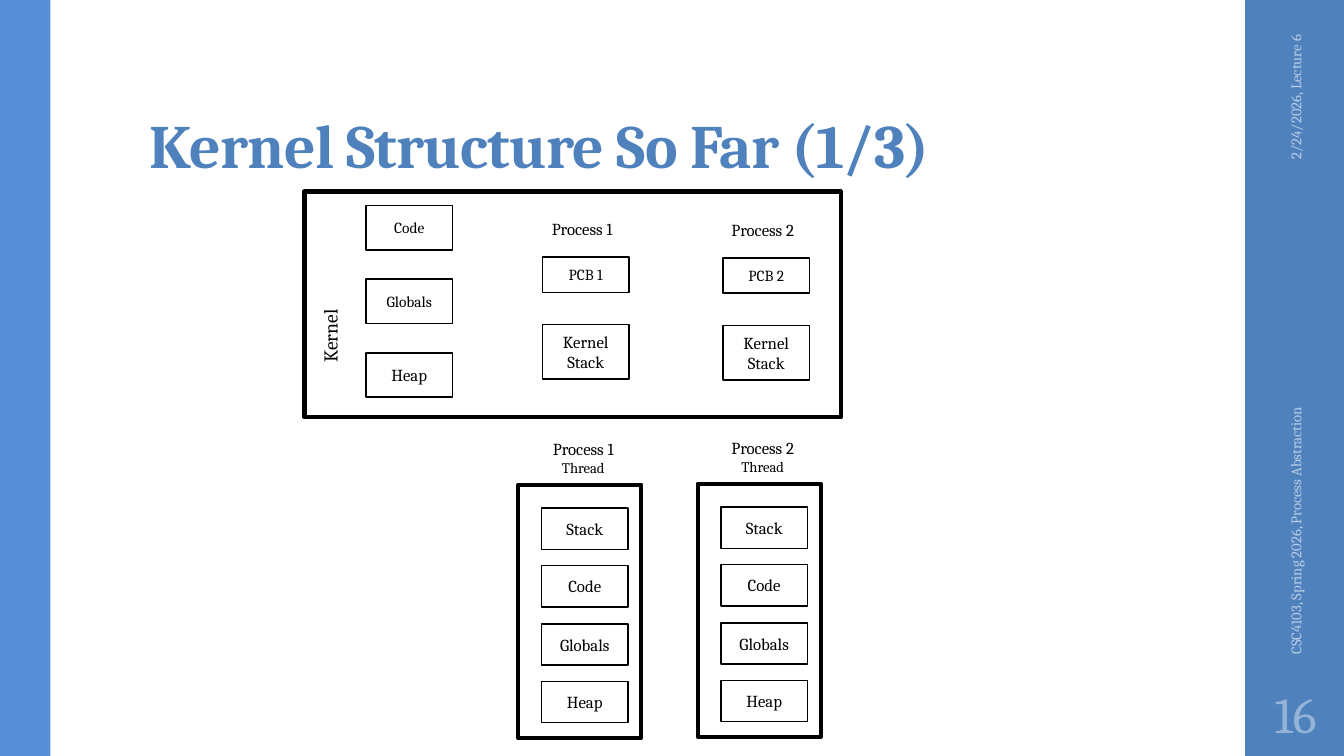
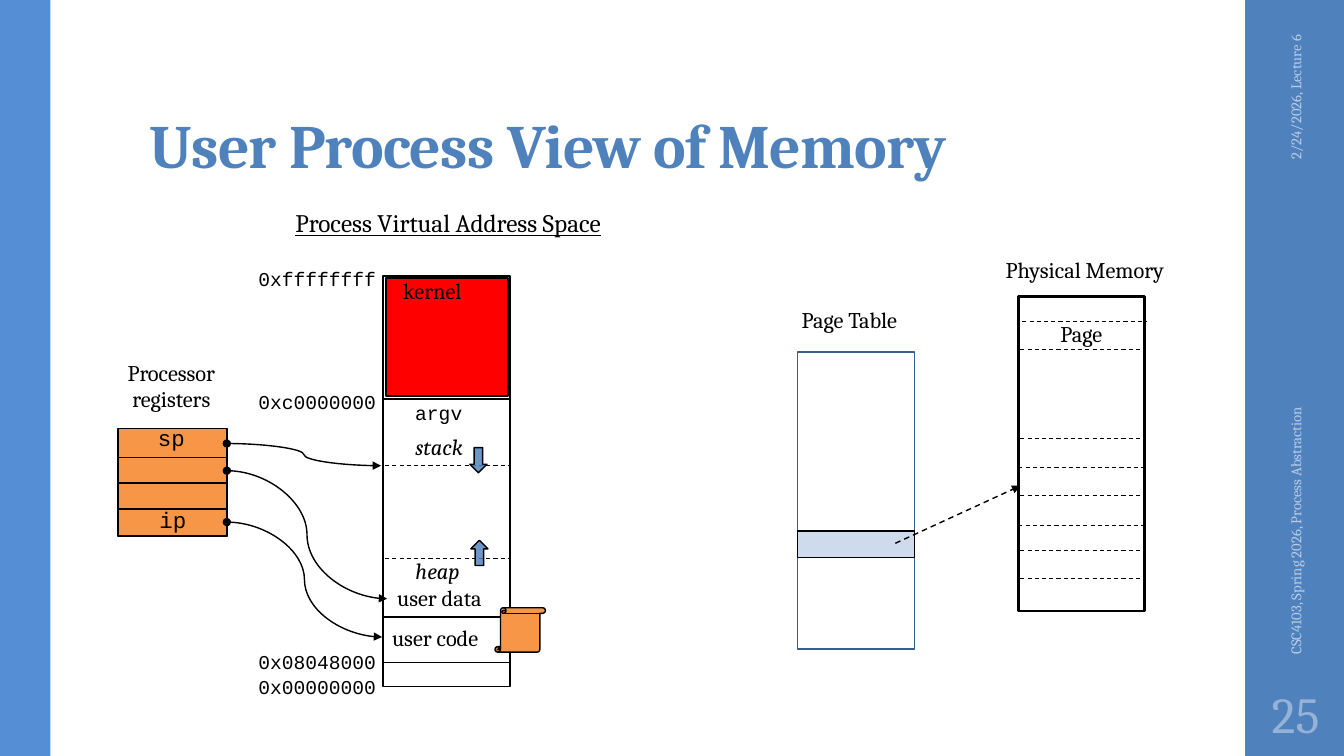
from dataclasses import dataclass
from typing import Any

from lxml.etree import SubElement
from pptx import Presentation
from pptx.dml.color import RGBColor
from pptx.enum.dml import MSO_LINE
from pptx.enum.shapes import MSO_CONNECTOR, MSO_SHAPE
from pptx.enum.text import MSO_ANCHOR, MSO_AUTO_SIZE, PP_ALIGN
from pptx.oxml.ns import qn
from pptx.util import Inches, Pt

SERIF, MONO = "Cambria", "Courier New"
BLACK, BLUE, SKY = "000000", "4F81BD", "558ED5"
PALE, STEEL, NAVY = "B9CDE5", "95B3D7", "376092"
ORANGE, RED = "F79646", "FF0000"
LEFT, MID, RIGHT = PP_ALIGN.LEFT, PP_ALIGN.CENTER, PP_ALIGN.RIGHT


def tint(color, code):
    color.rgb = RGBColor.from_string(code)


def style(para, size, font=SERIF, color=BLACK, align=MID):
    para.alignment = align
    para.font.size = Pt(size)
    para.font.name = font
    tint(para.font.color, color)


def write(shape, text, size, anchor=MSO_ANCHOR.TOP, **look):
    frame = shape.text_frame
    frame.word_wrap = True
    frame.vertical_anchor = anchor
    para = frame.paragraphs[0]
    para.text = text
    style(para, size, **look)
    return para


@dataclass
class Pane:
    slide: Any
    left: float
    top: float

    def spot(self, x, y):
        return Inches(round(self.left + x, 2)), Inches(round(self.top + y, 2))

    def shape(self, x, y, wide, high, fill=None, line=BLACK, width=1,
              kind=MSO_SHAPE.RECTANGLE, alpha=None):
        item = self.slide.shapes.add_shape(
            kind, *self.spot(x, y), Inches(wide), Inches(high))
        item.shadow.inherit = False
        if fill:
            item.fill.solid()
            tint(item.fill.fore_color, fill)
        else:
            item.fill.background()
        if alpha:
            color = item.element.spPr.find(qn("a:solidFill"))[0]
            SubElement(color, qn("a:alpha"), val=str(alpha * 1000))
        if line:
            tint(item.line.color, line)
            item.line.width = Pt(width)
        else:
            item.line.fill.background()
        return item

    def cell(self, x, y, high, text, size=12):
        item = self.shape(x, y, 0.86, high, width=1.1)
        write(item, text, size, MSO_ANCHOR.MIDDLE)

    def label(self, x, y, wide, high, text, size, **look):
        item = self.slide.shapes.add_textbox(
            *self.spot(x, y), Inches(wide), Inches(high))
        write(item, text, size, **look)
        return item

    def link(self, start, end, width=1, dash=False, head=None, tail=None,
             kind=MSO_CONNECTOR.STRAIGHT):
        item = self.slide.shapes.add_connector(
            kind, *self.spot(*start), *self.spot(*end))
        tint(item.line.color, BLACK)
        item.line.width = Pt(width)
        if dash:
            item.line.dash_style = MSO_LINE.DASH
        props = item.element.spPr
        stroke = props.find(qn("a:ln"))
        for tag, tip in (("a:headEnd", head), ("a:tailEnd", tail)):
            if tip:
                SubElement(stroke, qn(tag), type=tip)
        SubElement(props, qn("a:effectLst"))


def bands(layout, slide):
    page = Pane(slide, 0, 0)
    tree = layout.element.cSld.spTree
    for x, wide, color in ((0, 0.5, SKY), (12.35, 1, BLUE)):
        band = page.shape(x, 0, wide, 7.5, color, None)
        tree.insert(2, band.element)


def frame(slide, title, number):
    head = slide.shapes.title
    head.left, head.top = Inches(1.38), Inches(0.32)
    head.width, head.height = Inches(10.6), Inches(1.53)
    para = write(head, title, 44, MSO_ANCHOR.BOTTOM, color=BLUE, align=LEFT)
    para.font.bold = True
    para.line_spacing = 0.9
    para.runs[0].font._element.set("spc", "-50")
    head.text_frame.auto_size = MSO_AUTO_SIZE.NONE
    head.text_frame.margin_top = Inches(0.03)

    page = Pane(slide, 0, 0)
    for x, y, wide, text, align in (
        (11.81, 1.09, 2.08, "2/24/2026, Lecture 6", RIGHT),
        (10.89, 4.43, 3.92, "CSC4103, Spring 2026, Process Abstraction", LEFT),
    ):
        note = page.label(x, y, wide, 0.4, text, 10.5, color=PALE,
                          align=align, anchor=MSO_ANCHOR.MIDDLE)
        note.rotation = 270
    count = page.label(12.35, 6.75, 1, 0.65, str(number), 36, color=STEEL,
                       anchor=MSO_ANCHOR.MIDDLE)
    count.text_frame.margin_left = count.text_frame.margin_right = Inches(0.05)


def kernel(slide, left, top):
    pane = Pane(slide, left, top)
    pane.shape(0, 0, 5.32, 2.24, width=3)
    name = pane.label(0.03, 0.77, 0.44, 1.33, "Kernel", 14,
                      anchor=MSO_ANCHOR.MIDDLE)
    name.text_frame._bodyPr.set("vert", "vert270")
    for row, (text, size) in enumerate(
            (("Code", 11), ("Globals", 11), ("Heap", 12))):
        pane.cell(0.61, 0.14 + 0.73 * row, 0.44, text, size)
    for num, x, y in ((1, 2.36, 0.22), (2, 4.15, 0.23)):
        pane.label(x - 0.12, y, 1.03, 0.3, f"Process {num}", 12)
        pane.cell(x, y + 0.43, 0.35, f"PCB {num}", 11)
        pane.cell(x, y + 1.1, 0.54, "Kernel\nStack")


def process(slide, left, top, num):
    pane = Pane(slide, left, top)
    name = pane.label(0.13, -0.51, 1.03, 0.49, f"Process {num}\nThread", 12)
    name.text_frame.paragraphs[0].runs[1].font.size = Pt(10.5)
    for row, text in enumerate(("Stack", "Code", "Globals", "Heap")):
        pane.cell(0.23, 0.23 + 0.575 * row, 0.41, text)
    pane.shape(0, 0, 1.22, 2.51, width=3)


def space(slide, left, top):
    pane = Pane(slide, left, top)
    title = pane.label(-1.33, -0.73, 3.95, 0.4,
                       "Process Virtual Address Space", 18)
    title.text_frame.paragraphs[0].font.underline = True
    for y, text in ((-0.14, "0xffffffff"), (1.08, "0xc0000000"),
                    (3.66, "0x08048000"), (3.91, "0x00000000")):
        pane.label(-1.4, y, 1.43, 0.34, text, 14, font=MONO, align=RIGHT)
    pane.label(0.22, 1.19, 0.77, 0.34, "argv", 14, font=MONO, align=LEFT)
    for y, wide, text in ((1.51, 0.89, "stack"), (2.74, 0.86, "heap")):
        part = pane.label(0.11, y, wide, 0.37, text, 16)
        part.text_frame.paragraphs[0].font.italic = True
    pane.shape(0, 0, 1.26, 4.07)
    for y, width in ((1.22, 1.25), (3.38, 1), (3.83, 1)):
        pane.link((0, y), (1.26, y), width)
    for y in (1.88, 2.8):
        pane.link((0.02, y), (1.27, y), 0.75, dash=True)
    for x, y, turn in ((0.87, 2.62, 0), (0.86, 1.7, 180)):
        arrow = pane.shape(x, y, 0.17, 0.25, BLUE,
                           kind=MSO_SHAPE.UP_ARROW, alpha=83)
        arrow.rotation = turn
    pane.shape(1.11, 3.29, 0.5, 0.44, ORANGE, kind=MSO_SHAPE.VERTICAL_SCROLL)
    pane.shape(0.03, 0.02, 1.21, 1.17, RED)
    for x, y, text in ((0.1, -0.04, "kernel"), (0.04, 3.01, "user data"),
                       (-0.01, 3.4, "user code")):
        pane.label(x, y, 1.25, 0.37, text, 16, align=LEFT)


def bank(slide, left, top):
    pane = Pane(slide, left, top)
    title = pane.label(-0.1, -0.74, 1.26, 0.64, "Processor", 16)
    para = title.text_frame.add_paragraph()
    para.text = "registers"
    style(para, 16)
    pane.shape(0, 0, 1.08, 1.07, ORANGE)
    for y, high in ((0.29, 0.25), (0.8, 0.27)):
        pane.shape(0, y, 1.08, high)
    for x, y, wide, text in ((0.26, -0.09, 0.54, "sp"),
                             (0.23, 0.72, 0.63, "ip")):
        pane.label(x, y, wide, 0.37, text, 16, font=MONO)
    for y, end in ((0.15, (2.61, 0.37)), (0.42, (2.67, 1.69)),
                   (0.93, (2.62, 2.07))):
        pane.link((1.08, y), end, head="oval", tail="triangle",
                  kind=MSO_CONNECTOR.CURVE)


def table(slide, left, top):
    pane = Pane(slide, left, top)
    pane.label(-0.24, -0.5, 1.51, 0.37, "Page Table", 16)
    pane.shape(0, 0, 1.16, 2.95, line=NAVY)
    pane.shape(0, 1.78, 1.16, 0.26, BLUE, alpha=28)
    pane.link((0.97, 1.9), (2.21, 1.33), dash=True, tail="triangle")


def memory(slide, left, top):
    pane = Pane(slide, left, top)
    pane.label(-0.42, -0.45, 2.16, 0.37, "Physical Memory", 16)
    pane.shape(0, 0, 1.25, 3.12, width=1.75)
    for x, y in ((0.04, 0.25), (0.02, 0.53), (0.02, 1.41), (0, 1.7),
                 (0.02, 1.98), (0, 2.27), (0.02, 2.52), (0.02, 2.8)):
        pane.link((x, y), (x + 1.24, y), 0.75, dash=True)
    pane.label(0.26, 0.19, 0.73, 0.37, "Page", 16)


def main():
    deck = Presentation()
    deck.slide_width, deck.slide_height = Inches(13.33), Inches(7.5)
    layout = deck.slide_layouts[5]

    first = deck.slides.add_slide(layout)
    bands(layout, first)
    frame(first, "Kernel Structure So Far (1/3)", 16)
    kernel(first, 3.02, 1.9)
    process(first, 5.14, 4.81, 1)
    process(first, 6.92, 4.8, 2)

    second = deck.slides.add_slide(layout)
    frame(second, "User Process View of Memory", 25)
    space(second, 3.8, 2.74)
    bank(second, 1.17, 4.25)
    table(second, 7.91, 3.49)
    memory(second, 10.1, 2.94)

    deck.save("out.pptx")


if __name__ == "__main__":
    main()
